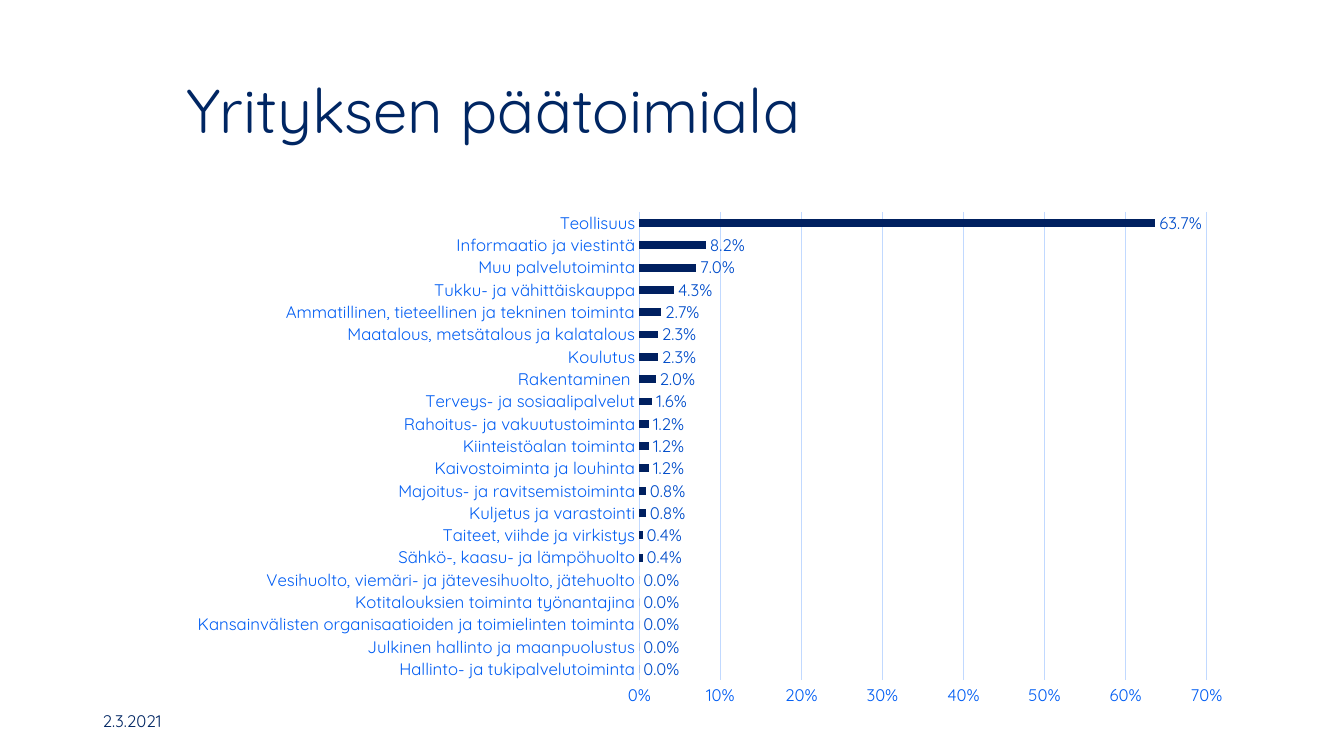
import pptx
import pptx.util
import pptx.chart.data
import pptx.dml.color
import pptx.enum.chart
import pptx.enum.text

Pt = pptx.util.Pt
ENUM = pptx.enum.chart

# Content: text, box (left, top, width, height), type style, line spacing
TEXTS = [
    ("Yrityksen päätoimiala", (126, 28.8, 762.5, 104.4), "title", 0.9),
    ("2.3.2021", (66.24, 500.4, 216, 28.8), "date", 1),
]
BOX = (126, 144, 762.5, 367.2)

# Shares by industry, top bar first
SHARES = [
    ("Teollisuus", 0.637),
    ("Informaatio ja viestintä", 0.082),
    ("Muu palvelutoiminta", 0.07),
    ("Tukku- ja vähittäiskauppa", 0.043),
    ("Ammatillinen, tieteellinen ja tekninen toiminta", 0.027),
    ("Maatalous, metsätalous ja kalatalous", 0.023),
    ("Koulutus", 0.023),
    ("Rakentaminen ", 0.02),
    ("Terveys- ja sosiaalipalvelut", 0.016),
    ("Rahoitus- ja vakuutustoiminta", 0.012),
    ("Kiinteistöalan toiminta", 0.012),
    ("Kaivostoiminta ja louhinta", 0.012),
    ("Majoitus- ja ravitsemistoiminta", 0.008),
    ("Kuljetus ja varastointi", 0.008),
    ("Taiteet, viihde ja virkistys", 0.004),
    ("Sähkö-, kaasu- ja lämpöhuolto", 0.004),
    ("Vesihuolto, viemäri- ja jätevesihuolto, jätehuolto", 0),
    ("Kotitalouksien toiminta työnantajina", 0),
    ("Kansainvälisten organisaatioiden ja toimielinten toiminta", 0),
    ("Julkinen hallinto ja maanpuolustus", 0),
    ("Hallinto- ja tukipalvelutoiminta", 0),
]

# Theme: type sizes and colours
THEME = {
    "face": "Quicksand",
    "title": (44, "002663"),
    "date": (12, "002663"),
    "chart": (10, "002663"),
    "axis": (12, "005DF3"),
    "label": (12, "004DCA"),
    "bar": "002060",
    "grid": "C1D9FF",
}


def tint(code):
    return pptx.dml.color.RGBColor.from_string(code)


def apply(item, **attrs):
    for name, value in attrs.items():
        setattr(item, name, value)


def style(font, key):
    size, code = THEME[key]
    apply(font, name=THEME["face"], size=Pt(size), bold=False)
    font.color.rgb = tint(code)


def rule(line):
    line.width = Pt(0.75)
    line.color.rgb = tint(THEME["grid"])


deck = pptx.Presentation()
apply(deck, slide_width=Pt(960), slide_height=Pt(540))
slide = deck.slides.add_slide(deck.slide_layouts[6])

# Title and date
for text, box, key, gap in TEXTS:
    frame = slide.shapes.add_textbox(*map(Pt, box)).text_frame
    apply(frame, word_wrap=True, vertical_anchor=pptx.enum.text.MSO_ANCHOR.MIDDLE)
    para = frame.paragraphs[0]
    apply(para, text=text, line_spacing=gap)
    style(para.runs[0].font, key)

# Bar chart: categories run upwards from the axis
data = pptx.chart.data.CategoryChartData(number_format="0.0%")
names, values = zip(*reversed(SHARES))
data.categories = names
data.add_series("Series 1", values)
chart = slide.shapes.add_chart(
    ENUM.XL_CHART_TYPE.BAR_CLUSTERED, *map(Pt, BOX), data).chart
apply(chart, has_legend=False, has_title=False)
style(chart.font, "chart")

# Bars and value labels
plot = chart.plots[0]
apply(plot, gap_width=182, vary_by_categories=False, has_data_labels=True)
fill = plot.series[0].format.fill
fill.solid()
fill.fore_color.rgb = tint(THEME["bar"])
labels = plot.data_labels
apply(labels, show_value=True, number_format="0.0%",
      number_format_is_linked=False,
      position=ENUM.XL_LABEL_POSITION.OUTSIDE_END)
style(labels.font, "label")

# Axes and grid
cat, val = chart.category_axis, chart.value_axis
for axis in (cat, val):
    apply(axis, major_tick_mark=ENUM.XL_TICK_MARK.NONE,
          minor_tick_mark=ENUM.XL_TICK_MARK.NONE)
    style(axis.tick_labels.font, "axis")
cat.has_major_gridlines = False
rule(cat.format.line)
apply(val, minimum_scale=0, maximum_scale=0.7, major_unit=0.1,
      has_major_gridlines=True)
apply(val.tick_labels, number_format="0%", number_format_is_linked=False)
val.format.line.fill.background()
rule(val.major_gridlines.format.line)

deck.save("out.pptx")
